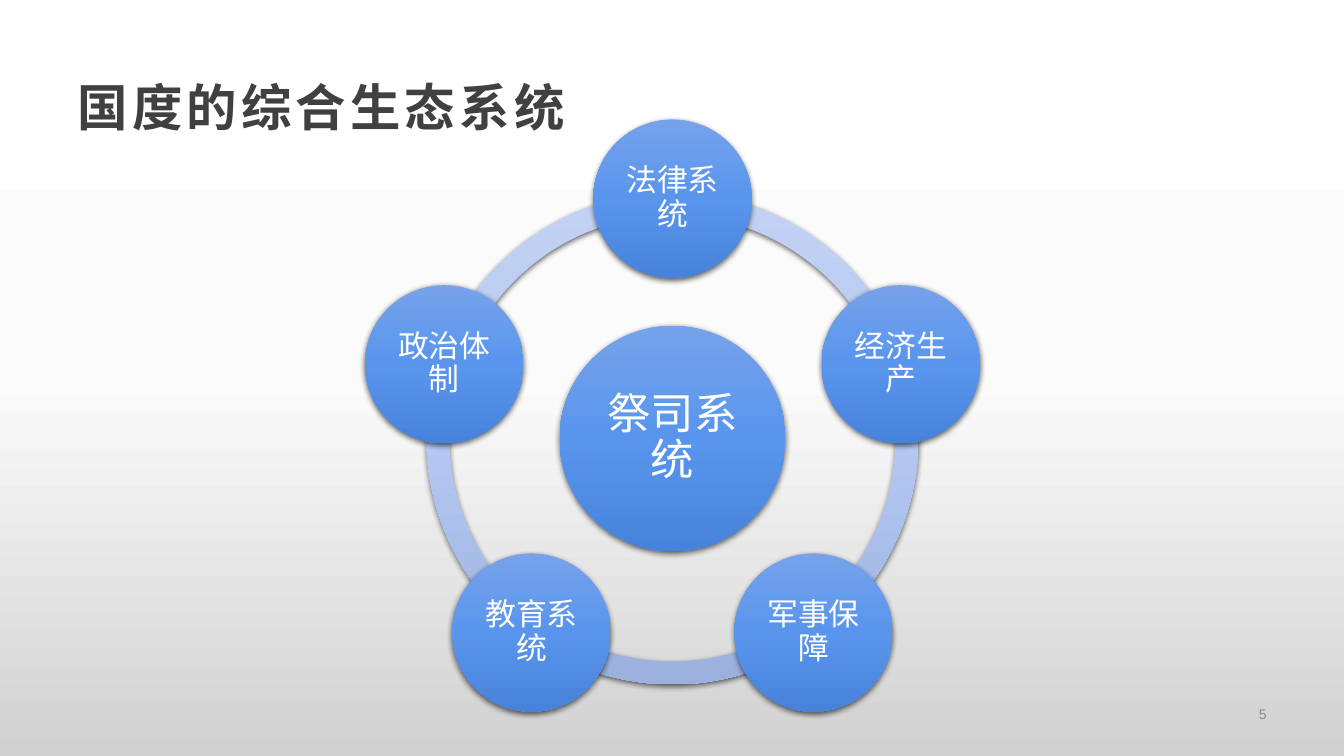
import math

import pptx
import pptx.dml.color
import pptx.enum.shapes
import pptx.enum.text
import pptx.oxml
import pptx.oxml.ns
import pptx.util

Inches = pptx.util.Inches
Align = pptx.enum.text.PP_ALIGN
Shape = pptx.enum.shapes.MSO_SHAPE
NAMESPACE = pptx.oxml.ns.nsdecls("a")


def color(value):
    return pptx.dml.color.RGBColor.from_string(value)


class EcosystemSlide:
    """Draws the ring diagram with one shared style."""

    background = ("FFFFFF", "FBFBFB", "D1D1D1")
    ring_fill = ("C2D1F3", "B4C8F3", "9BB0DD")
    node_fill = ("76A2EA", "5995ED", "4783DA")
    center = (6.67, 4.35)

    def __init__(self, presentation):
        self.slide = presentation.slides.add_slide(presentation.slide_layouts[5])
        self.gradient(self.slide.background.fill, self.slide._element, self.background)

    def gradient(self, fill, element, colors):
        fill.gradient()
        stops = "".join(
            f'<a:gs pos="{index * 50000}"><a:srgbClr val="{value}"/></a:gs>'
            for index, value in enumerate(colors))
        old = next(element.iter(pptx.oxml.ns.qn("a:gradFill")))
        old.getparent().replace(old, pptx.oxml.parse_xml(
            f'<a:gradFill {NAMESPACE} rotWithShape="1"><a:gsLst>{stops}</a:gsLst>'
            '<a:lin ang="5400000" scaled="0"/></a:gradFill>'))

    def shadow(self, properties, blur, distance, angle, alpha):
        effect = pptx.oxml.parse_xml(
            f'<a:effectLst {NAMESPACE}><a:outerShdw blurRad="{pptx.util.Pt(blur)}" '
            f'dist="{pptx.util.Pt(distance)}" dir="{angle * 60000}" algn="ctr" rotWithShape="0">'
            f'<a:srgbClr val="000000"><a:alpha val="{alpha * 1000}"/></a:srgbClr>'
            '</a:outerShdw></a:effectLst>')
        properties.append(effect)
        return effect

    def add_text(self, frame, text, size, hex_color, align, margin=0.1, font="Arial", bold=False):
        frame.word_wrap = True
        frame.vertical_anchor = pptx.enum.text.MSO_ANCHOR.MIDDLE
        for side in ("left", "top", "right", "bottom"):
            setattr(frame, f"margin_{side}", Inches(margin))
        paragraph = frame.paragraphs[0]
        paragraph.alignment = align
        run = paragraph.add_run()
        run.text = text
        for name, value in {"size": pptx.util.Pt(size), "name": font, "bold": bold}.items():
            setattr(run.font, name, value)
        run.font.color.rgb = color(hex_color)
        return run

    def title(self, text):
        title = self.slide.shapes.title
        box = {"left": 0.67, "top": 0.67, "width": 12, "height": 0.77}
        for name, value in box.items():
            setattr(title, name, Inches(value))
        font = "Noto Sans CJK SC"
        run = self.add_text(title.text_frame, text, 36, "404040", Align.LEFT, font=font, bold=True)
        properties = run._r.get_or_add_rPr()
        properties.set("spc", "300")
        latin = properties.find(pptx.oxml.ns.qn("a:latin"))
        latin.addnext(pptx.oxml.parse_xml(f'<a:ea {NAMESPACE} typeface="{font}"/>'))
        latin.addprevious(self.shadow(properties, 3, 3, 45, 40))

    def round_shape(self, kind, x, y, diameter, colors):
        shape = self.slide.shapes.add_shape(
            kind, Inches(x - diameter / 2), Inches(y - diameter / 2),
            Inches(diameter), Inches(diameter))
        self.gradient(shape.fill, shape._element.spPr, colors)
        shape.line.fill.background()
        self.shadow(shape._element.spPr, 4.5, 1.5, 90, 63)
        return shape

    def arc(self, start, sweep):
        shape = self.round_shape(Shape.BLOCK_ARC, *self.center, 4.88, self.ring_fill)
        for index, value in enumerate((start * 0.6, (start + sweep) % 360 * 0.6, 0.046)):
            shape.adjustments[index] = value

    def node(self, text, x, y, diameter, size, margin):
        shape = self.round_shape(Shape.OVAL, x, y, diameter, self.node_fill)
        self.add_text(shape.text_frame, text, size, "FFFFFF", Align.CENTER, margin)
        shape.text_frame.paragraphs[0].line_spacing = 0.9

    def ring(self, hub, labels):
        step = 360 / len(labels)
        angles = [(270 + index * step) % 360 for index in range(len(labels))]
        for angle in angles:
            self.arc(angle, step)
        self.node(hub, *self.center, 2.24, 31, 0.04)
        for label, angle in zip(labels, map(math.radians, angles)):
            x = self.center[0] + 2.38 * math.cos(angle)
            y = self.center[1] + 2.38 * math.sin(angle)
            self.node(label, x, y, 1.57, 22, 0.03)

    def page_number(self, text):
        box = self.slide.shapes.add_textbox(
            Inches(9.71), Inches(6.91), Inches(2.95), Inches(0.35))
        self.add_text(box.text_frame, text, 10, "8C8C8C", Align.RIGHT)


def main():
    presentation = pptx.Presentation()
    presentation.slide_width = Inches(13.33)
    presentation.slide_height = Inches(7.5)
    slide = EcosystemSlide(presentation)
    slide.title("国度的综合生态系统")
    slide.ring("祭司系统", ["法律系统", "经济生产", "军事保障", "教育系统", "政治体制"])
    slide.page_number("5")
    presentation.save("out.pptx")


if __name__ == "__main__":
    main()
